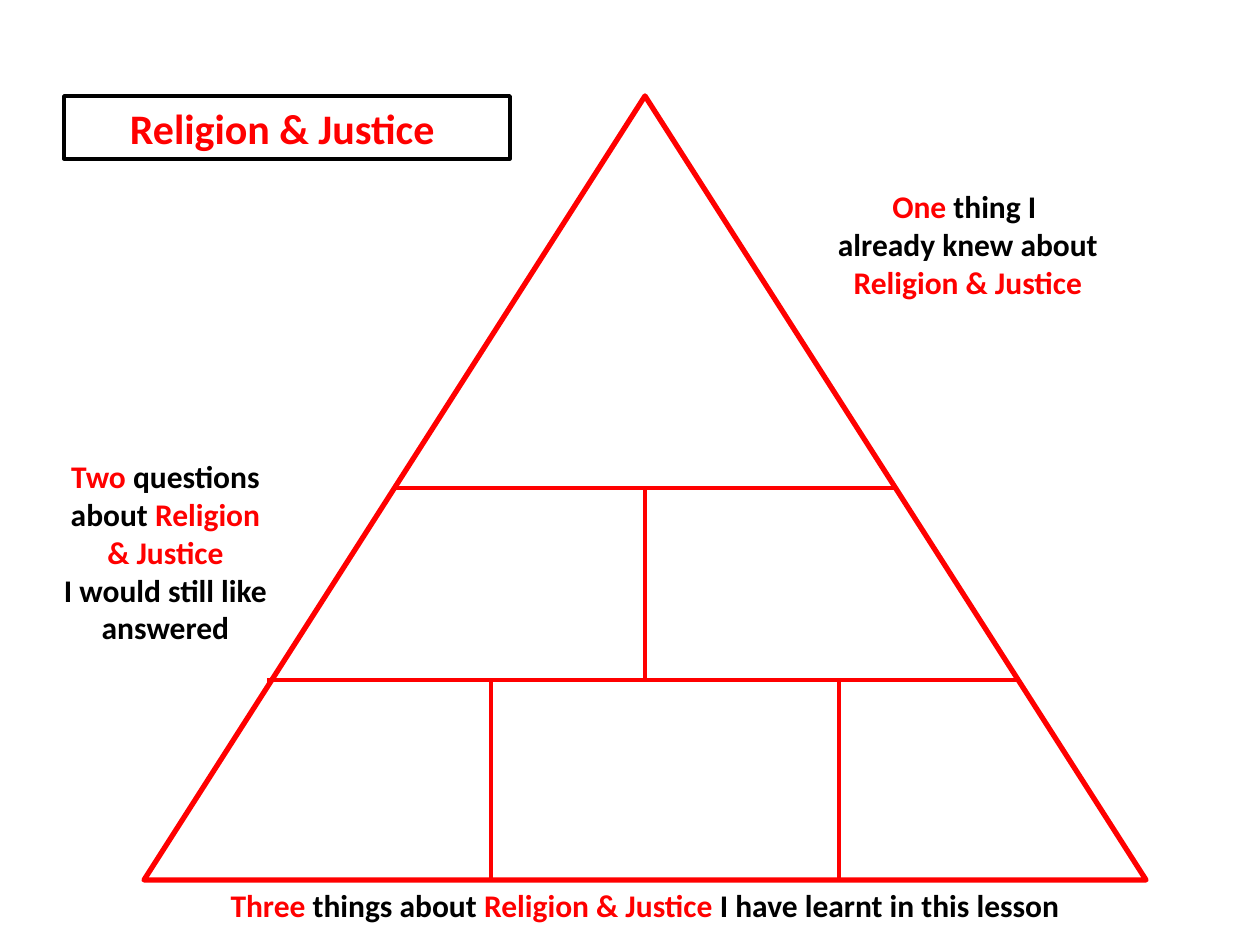
from pptx import Presentation
from pptx.dml.color import RGBColor
from pptx.enum.shapes import MSO_CONNECTOR, MSO_SHAPE
from pptx.enum.text import MSO_ANCHOR, PP_ALIGN
from pptx.oxml.ns import qn
from pptx.util import Emu, Pt
from lxml.etree import SubElement

PX = 914400 // 126
RED = RGBColor(0xFF, 0x00, 0x00)
BLACK = RGBColor(0x00, 0x00, 0x00)
WHITE = RGBColor(0xFF, 0xFF, 0xFF)

LEFT, TOP, WIDTH, HEIGHT = 144, 96, 1002, 784
BOTTOM, MIDDLE = TOP + HEIGHT, LEFT + WIDTH // 2
UPPER, LOWER = 488, 680  # heights of the two floors in the pyramid
DIVIDERS = [
    (394, UPPER, 896, UPPER),
    (267, LOWER, 1017, LOWER),
    (MIDDLE, UPPER, MIDDLE, LOWER),
    (491, LOWER, 491, BOTTOM),
    (839, LOWER, 839, BOTTOM),
]

TOPIC = ("Religion & Justice", RED)
PROMPTS = [
    ((809, 181, 318, 127), [
        [("One", RED), (" thing I ", BLACK)],
        [("already knew about ", BLACK), TOPIC],
    ]),
    ((44, 451, 243, 204), [
        [("Two", RED), (" questions about ", BLACK), TOPIC],
        [("I would still like answered", BLACK)],
    ]),
    ((LEFT, BOTTOM, WIDTH, 50), [
        [("Three", RED), (" things about ", BLACK), TOPIC,
         (" I have learnt in this lesson", BLACK)],
    ]),
]


def px(*lengths):
    return [Emu(length * PX) for length in lengths]


def write(shape, paragraphs, size):
    """Fill a shape with centred bold paragraphs of (text, colour) spans."""
    frame = shape.text_frame
    frame.word_wrap = True
    frame.vertical_anchor = MSO_ANCHOR.TOP
    for index, spans in enumerate(paragraphs):
        para = frame.add_paragraph() if index else frame.paragraphs[0]
        para.alignment = PP_ALIGN.CENTER
        for text, colour in spans:
            span = para.add_run()
            span.text = text
            span.font.color.rgb = colour
            for name, value in {"name": "Calibri", "size": Pt(size), "bold": True}.items():
                setattr(span.font, name, value)


def add_outline(page, kind, area, colour, weight):
    shape = page.shapes.add_shape(kind, *px(*area))
    shape.shadow.inherit = False
    shape.fill.solid()
    shape.fill.fore_color.rgb = WHITE
    shape.line.color.rgb = colour
    shape.line.width = Pt(weight)
    return shape


def add_divider(page, ends):
    line = page.shapes.add_connector(MSO_CONNECTOR.STRAIGHT, *px(*ends))
    line.line.color.rgb = RED
    line.line.width = Pt(2.5)
    SubElement(line._element.spPr, qn("a:effectLst"))


def add_prompt(page, area, paragraphs):
    write(page.shapes.add_textbox(*px(*area)), paragraphs, 18)


def main():
    deck = Presentation()
    deck.slide_width, deck.slide_height = px(1260, 945)
    page = deck.slides.add_slide(deck.slide_layouts[6])
    add_outline(page, MSO_SHAPE.ISOSCELES_TRIANGLE, (LEFT, TOP, WIDTH, HEIGHT), RED, 3)
    for ends in DIVIDERS:
        add_divider(page, ends)
    for area, paragraphs in PROMPTS:
        add_prompt(page, area, paragraphs)
    title = add_outline(page, MSO_SHAPE.RECTANGLE, (64, TOP, 446, 63), BLACK, 2)
    write(title, [[("Religion & Justice ", RED)]], 24)
    deck.save("out.pptx")


if __name__ == "__main__":
    main()
